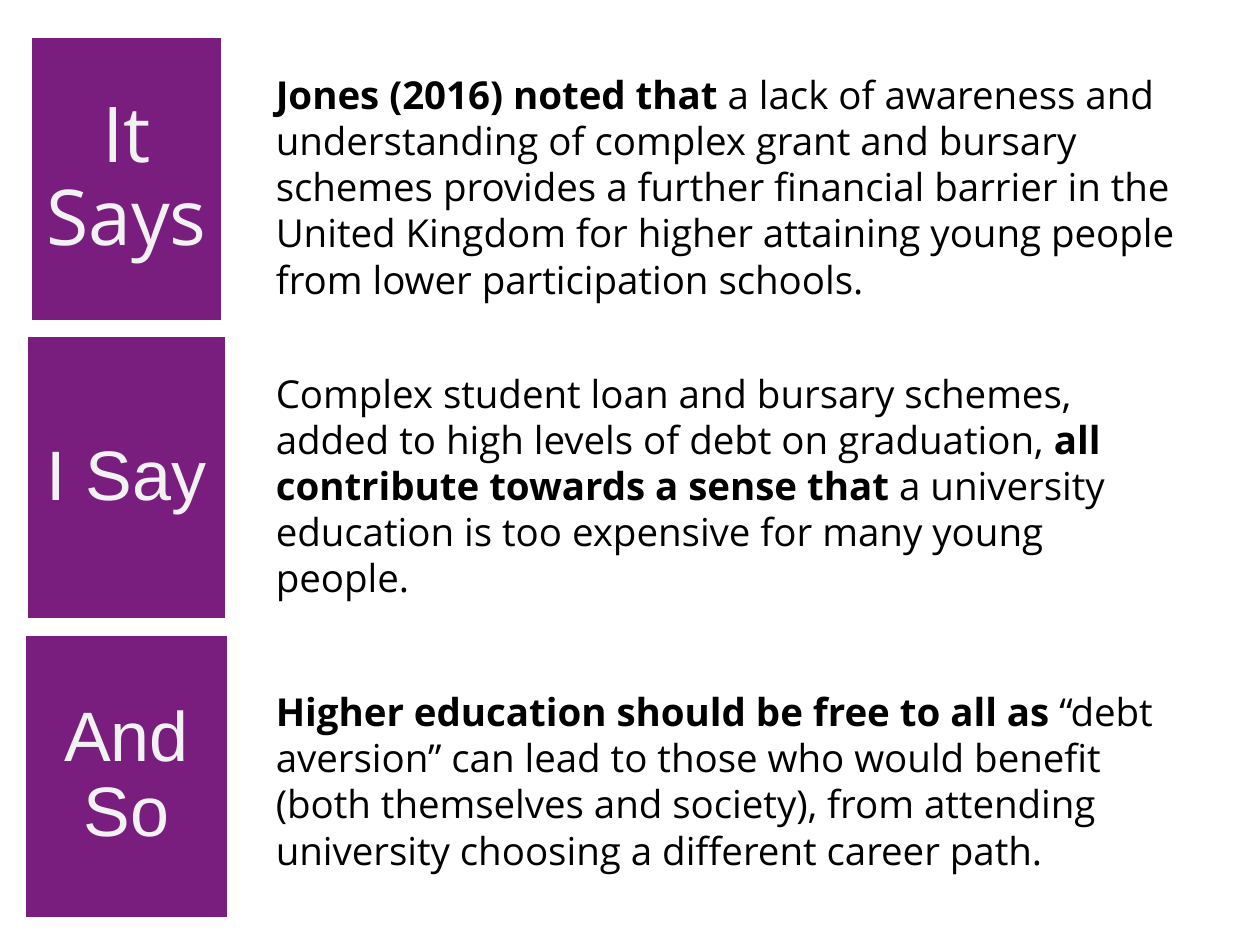
from pptx import Presentation
from pptx.dml.color import RGBColor
from pptx.enum.shapes import MSO_SHAPE as Shape
from pptx.enum.text import MSO_ANCHOR as Anchor, MSO_AUTO_SIZE as AutoSize, PP_ALIGN as Align
from pptx.util import Cm, Pt

COLORS = {"panel": "791E7F", "line": "FFFFFF", "label": "F2F2F2", "body": "000000"}

PANEL_CENTER, PANEL_TOP, PANEL_HEIGHT, PANEL_PITCH = 2.55, 0.74, 5.74, 6.02
BODY_LEFT, BODY_WIDTH = 5.31, 18.8

ROWS = [
    {
        "label": "It Says", "font": "Open Sans", "size": 44, "width": 3.89,
        "top": 1.3, "height": 4.95,
        "spans": [
            ("Jones (2016) noted that ", True),
            ("a lack of awareness and understanding of complex grant and bursary "
             "schemes provides a further financial barrier in the United Kingdom for "
             "higher attaining young people from lower participation schools.", False),
        ],
    },
    {
        "label": "I Say", "font": "Arial", "size": 40, "width": 4.06,
        "top": 7.32, "height": 4.95,
        "spans": [
            ("Complex student loan and bursary schemes, added to high levels of debt "
             "on graduation, ", False),
            ("all contribute towards a sense that", True),
            (" a university education is too expensive for many young people.", False),
        ],
    },
    {
        "label": "And So", "font": "Arial", "size": 40, "width": 4.11,
        "top": 13.74, "height": 4.01,
        "spans": [
            ("Higher education should be free to all as ", True),
            ("“debt aversion” can lead to those who would benefit (both themselves "
             "and society), from attending university choosing a different career "
             "path.", False),
        ],
    },
]


def color(name):
    return RGBColor.from_string(COLORS[name])


def set_all(target, values):
    for name, value in values.items():
        setattr(target, name, value)


def set_margins(frame, side, end):
    set_all(frame, {"margin_left": Cm(side), "margin_right": Cm(side),
                    "margin_top": Cm(end), "margin_bottom": Cm(end)})


def add_span(para, text, tint, **font):
    span = para.add_run()
    span.text = text
    set_all(span.font, font)
    span.font.color.rgb = color(tint)


def add_panel(page, row, top):
    left = PANEL_CENTER - row["width"] / 2
    panel = page.shapes.add_shape(
        Shape.RECTANGLE, Cm(left), Cm(top), Cm(row["width"]), Cm(PANEL_HEIGHT))
    panel.shadow.inherit = False
    panel.fill.solid()
    panel.fill.fore_color.rgb = color("panel")
    panel.line.color.rgb = color("line")
    panel.line.width = Pt(2)
    frame = panel.text_frame
    set_all(frame, {"word_wrap": True, "vertical_anchor": Anchor.MIDDLE})
    set_margins(frame, 0.28, 0.28)
    para = frame.paragraphs[0]
    set_all(para, {"alignment": Align.CENTER, "line_spacing": 0.9})
    add_span(para, row["label"], "label", name=row["font"], size=Pt(row["size"]))


def add_body(page, row):
    box = page.shapes.add_textbox(
        Cm(BODY_LEFT), Cm(row["top"]), Cm(BODY_WIDTH), Cm(row["height"]))
    frame = box.text_frame
    set_all(frame, {"word_wrap": True, "auto_size": AutoSize.SHAPE_TO_FIT_TEXT})
    set_margins(frame, 0.25, 0.13)
    for text, bold in row["spans"]:
        add_span(frame.paragraphs[0], text, "body",
                 name="Open Sans", size=Pt(22), bold=bold)


def main():
    deck = Presentation()
    set_all(deck, {"slide_width": Cm(25.4), "slide_height": Cm(19.05)})
    page = deck.slides.add_slide(deck.slide_layouts[6])
    for index, row in enumerate(ROWS):
        add_body(page, row)
        add_panel(page, row, PANEL_TOP + index * PANEL_PITCH)
    deck.save("out.pptx")


if __name__ == "__main__":
    main()
